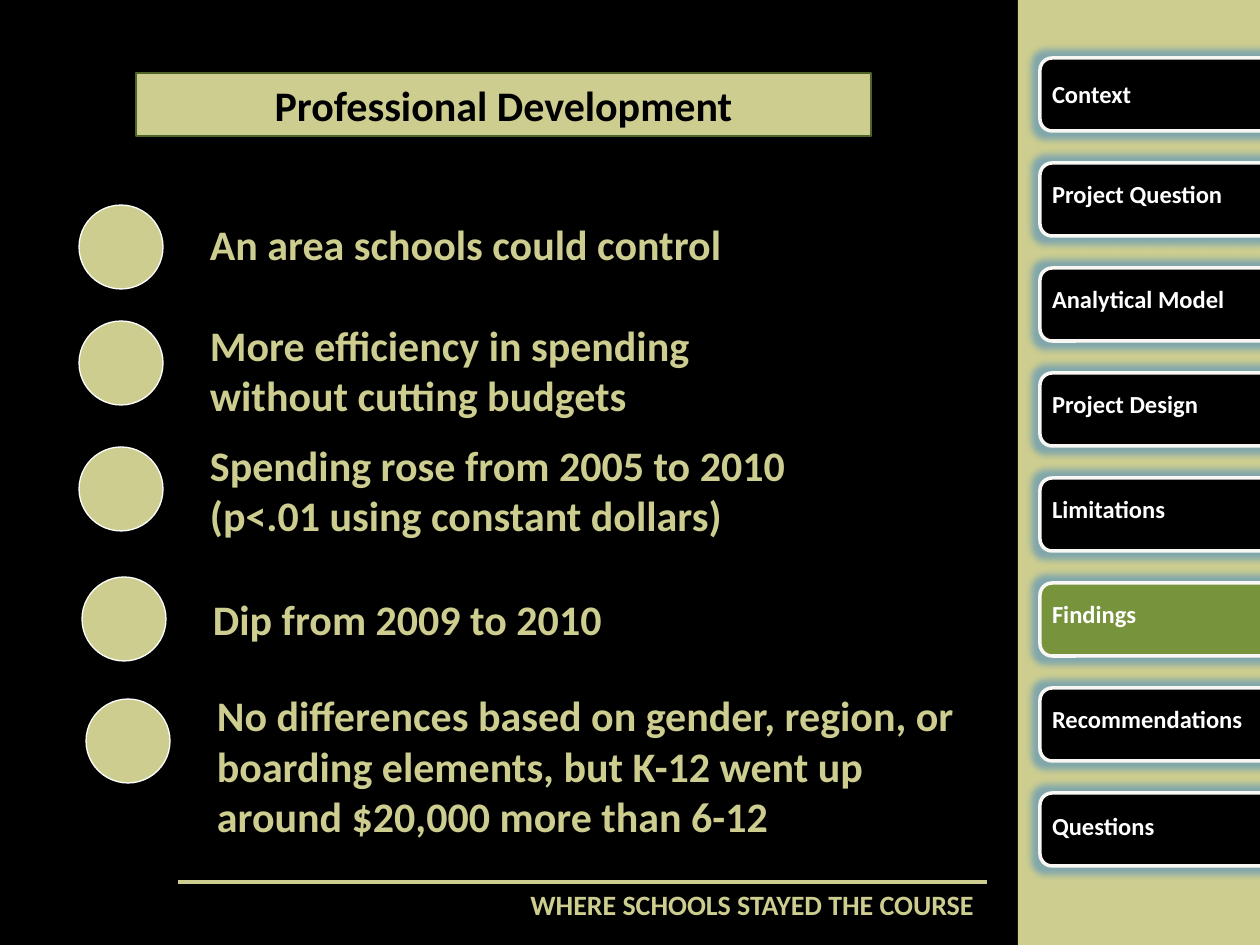
from lxml import etree
from pptx import Presentation
from pptx.dml.color import RGBColor
from pptx.enum.shapes import MSO_CONNECTOR, MSO_SHAPE
from pptx.enum.text import MSO_ANCHOR, MSO_AUTO_SIZE, PP_ALIGN
from pptx.oxml.ns import qn
from pptx.util import Emu, Pt

RECTANGLE = MSO_SHAPE.RECTANGLE
ROUNDED = MSO_SHAPE.ROUNDED_RECTANGLE
OVAL = MSO_SHAPE.OVAL
STRAIGHT = MSO_CONNECTOR.STRAIGHT
TOP, MIDDLE = MSO_ANCHOR.TOP, MSO_ANCHOR.MIDDLE
LEFT, CENTER, RIGHT = PP_ALIGN.LEFT, PP_ALIGN.CENTER, PP_ALIGN.RIGHT
NO_FIT = MSO_AUTO_SIZE.NONE

BLACK, WHITE, IVORY = "000000", "FFFFFF", "F8F7F3"
SAND, OLIVE, DARK_OLIVE, GLOW = "CDCD8F", "77933C", "4F6228", "4F8FC0"

TABS = ["Context", "Project Question", "Analytical Model", "Project Design",
        "Limitations", "Findings", "Recommendations", "Questions"]
ACTIVE_TAB = "Findings"
TAB_TOP, TAB_STEP = 58, 105
LABEL_DROPS = {"Context": 15, "Questions": 12}

POINTS = [
    ("An area schools could control", 79, 205, 212, 620, 63),
    ("More efficiency in spending without cutting budgets", 79, 321, 312, 620, 115),
    ("Spending rose from 2005 to 2010 (p<.01 using constant dollars)", 79, 447, 432, 620, 115),
    ("Dip from 2009 to 2010", 82, 577, 587, 620, 63),
    ("No differences based on gender, region, or boarding elements, "
     "but K-12 went up around $20,000 more than 6-12", 86, 699, 683, 784, 165),
]


def px(*lengths):
    return [Emu(round(length * 914400 / 126)) for length in lengths]


def color(value):
    return RGBColor.from_string(value)


class Painter:
    font = "Calibri"

    def __init__(self, slide):
        self.slide = slide

    def background(self, fill):
        self.slide.background.fill.solid()
        self.slide.background.fill.fore_color.rgb = color(fill)

    def paint(self, shape, fill, line=None, width=0.75):
        shape.fill.solid()
        shape.fill.fore_color.rgb = color(fill)
        if line:
            shape.line.color.rgb = color(line)
            shape.line.width = Pt(width)
        else:
            shape.line.fill.background()

    def letter(self, shape, text, size, ink, align=LEFT, anchor=TOP):
        frame = shape.text_frame
        frame.text = text
        frame.word_wrap = True
        frame.auto_size = NO_FIT
        frame.vertical_anchor = anchor
        frame.margin_left, frame.margin_right = px(13, 13)
        frame.margin_top, frame.margin_bottom = px(6, 6)
        para = frame.paragraphs[0]
        para.alignment = align
        font = para.runs[0].font
        font.name, font.size, font.bold = self.font, Pt(size), True
        font.color.rgb = color(ink)

    def title(self, text, *place):
        title = self.slide.shapes.title
        title.left, title.top, title.width, title.height = px(*place)
        self.paint(title, SAND, DARK_OLIVE)
        self.letter(title, text, 24, BLACK, CENTER, MIDDLE)

    def shape(self, kind, place, fill, line=None, width=0.75):
        shape = self.slide.shapes.add_shape(kind, *px(*place))
        shape.shadow.inherit = False
        self.paint(shape, fill, line, width)
        return shape

    def glow(self, shape):
        effects = shape._element.spPr.find(qn("a:effectLst"))
        glow = etree.SubElement(effects, qn("a:glow"), rad="101600")
        tint = etree.SubElement(glow, qn("a:srgbClr"), val=GLOW)
        etree.SubElement(tint, qn("a:alpha"), val="60000")

    def text(self, text, place, size, ink, align=LEFT, anchor=TOP):
        box = self.slide.shapes.add_textbox(*px(*place))
        self.letter(box, text, size, ink, align, anchor)

    def rule(self, start_x, start_y, end_x, end_y):
        rule = self.slide.shapes.add_connector(
            STRAIGHT, *px(start_x, start_y, end_x, end_y))
        rule.line.color.rgb = color(SAND)
        rule.line.width = Pt(2)
        etree.SubElement(rule._element.spPr, qn("a:effectLst"))

    def tab(self, label, top):
        fill = OLIVE if label == ACTIVE_TAB else BLACK
        self.glow(self.shape(ROUNDED, (1040, top, 242, 73), fill, IVORY, 2))
        drop = LABEL_DROPS.get(label, 10)
        self.text(label, (1039, top + drop, 221, 43), 14, WHITE)

    def point(self, text, left, dot_top, text_top, width, height):
        self.shape(OVAL, (left, dot_top, 84, 84), SAND, WHITE)
        self.text(text, (left + 118, text_top, width, height), 24, SAND, anchor=MIDDLE)


def main():
    deck = Presentation()
    deck.slide_width, deck.slide_height = px(1260, 945)
    painter = Painter(deck.slides.add_slide(deck.slide_layouts[5]))
    painter.background(BLACK)
    painter.title("Professional Development", 136, 73, 735, 63)
    painter.shape(RECTANGLE, (1018, 0, 242, 945), SAND)
    for index, label in enumerate(TABS):
        painter.tab(label, TAB_TOP + index * TAB_STEP)
    for point in POINTS:
        painter.point(*point)
    painter.rule(987, 882, 178, 882)
    painter.text("WHERE SCHOOLS STAYED THE COURSE", (462, 882, 525, 47), 16, SAND, RIGHT)
    deck.save("out.pptx")


if __name__ == "__main__":
    main()
